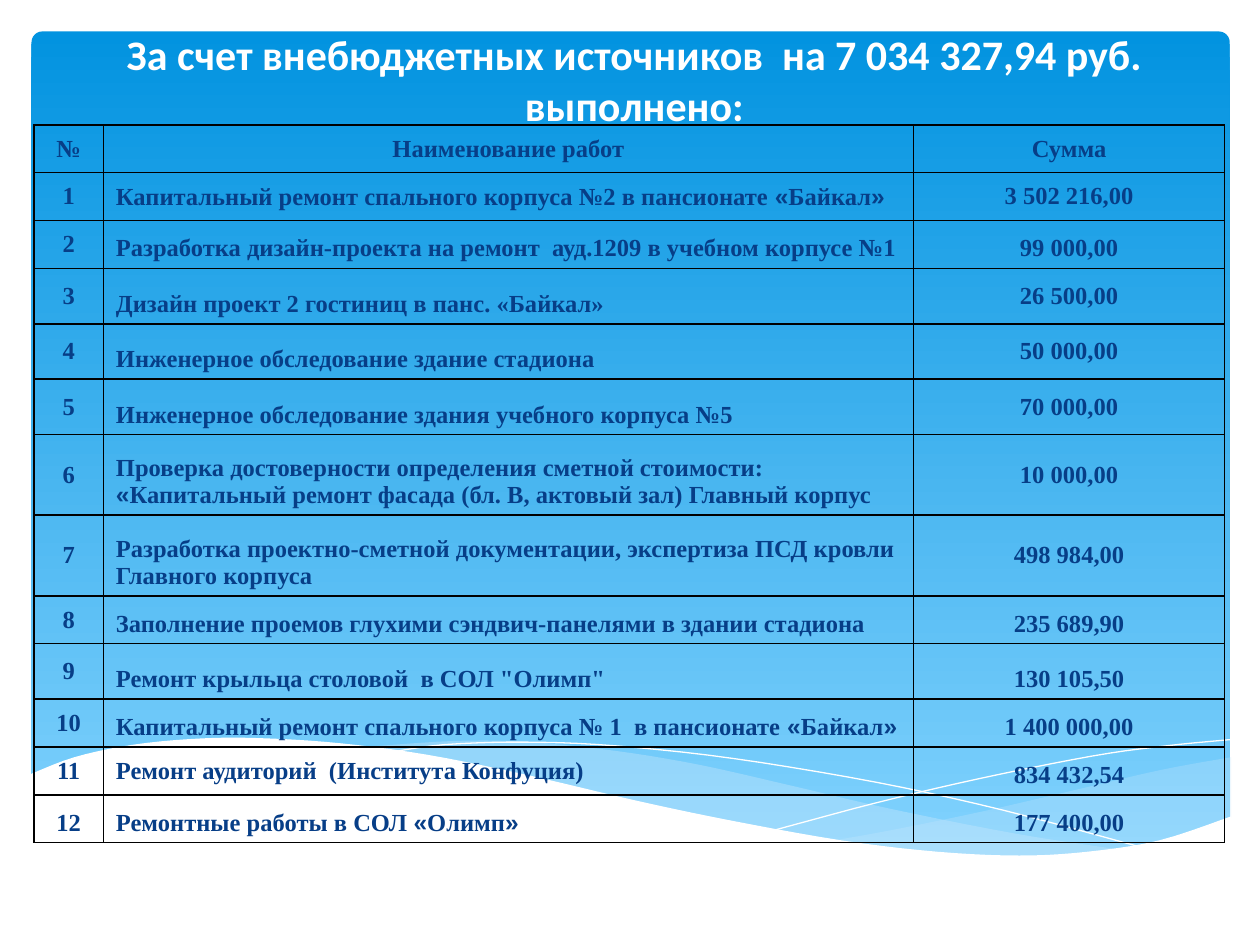
from lxml import etree
from pptx import Presentation
from pptx.dml.color import RGBColor
from pptx.enum.shapes import MSO_SHAPE
from pptx.enum.text import MSO_ANCHOR, PP_ALIGN
from pptx.oxml.ns import qn
from pptx.util import Inches, Pt

ROUNDED = MSO_SHAPE.ROUNDED_RECTANGLE
CENTER, LEFT = PP_ALIGN.CENTER, PP_ALIGN.LEFT
ANCHORS = {"m": MSO_ANCHOR.MIDDLE, "b": MSO_ANCHOR.BOTTOM}
WHITE, NAVY, BLACK, PALE = "FFFFFF", "073E87", "000000", "C6E7FC"
SKY_TOP, SKY_BOTTOM = "0293E0", "83D3FE"
NAME_FONTS = ("Times New Roman", "Arial")

TITLE = "За счет внебюджетных источников  на 7 034 327,94 руб. выполнено:"
HEADER = ("№", "Наименование работ", "Сумма")
# Works: name with "|" where the font alternates, amount, cell anchors, row height
WORKS = [
    ("Капитальный ремонт спального корпуса №2 в пансионате |«|Байкал|»", "3 502 216,00", "mmm", 0.38),
    ("Разработка дизайн-проекта на ремонт  ауд.1209 в учебном корпусе №1", "99 000,00", "mbb", 0.38),
    ("Дизайн проект 2 гостиниц в панс. «Байкал»", "26 500,00", "mbm", 0.44),
    ("Инженерное обследование здание стадиона", "50 000,00", "mbm", 0.44),
    ("Инженерное обследование здания учебного корпуса №5", "70 000,00", "mbm", 0.44),
    ("Проверка достоверности определения сметной стоимости: |«|"
     "Капитальный ремонт фасада (бл. В, актовый зал) Главный корпус", "10 000,00", "mbm", 0.64),
    ("Разработка проектно-сметной документации, экспертиза ПСД кровли Главного корпуса",
     "498 984,00", "mbm", 0.64),
    ("Заполнение проемов глухими сэндвич-панелями в здании стадиона", "235 689,90", "mbb", 0.38),
    ("Ремонт крыльца столовой  в СОЛ \"Олимп\"", "130 105,50", "mbb", 0.44),
    ("Капитальный ремонт спального корпуса № 1  в пансионате |«|Байкал|»", "1 400 000,00", "mbb", 0.38),
    ("Ремонт аудиторий  (Института Конфуция)", "834 432,54", "mmb", 0.38),
    ("Ремонтные работы в СОЛ |«|Олимп|»", "177 400,00", "bbb", 0.38),
]
COLUMN_WIDTHS = (0.55, 6.43, 2.47)
HEADER_HEIGHT = 0.38

RIGHT_WAVE = [
    [(9.77, 6.01), (9.22, 6.11), (8.62, 6.25), (7.8, 6.44), (7.07, 6.59), (6.62, 6.67)],
    [(6.62, 6.67), (7.19, 6.74), (7.7, 6.79), (8.15, 6.8), (8.64, 6.77), (9.22, 6.67), (9.77, 6.49)],
]
MIDDLE_WAVE = [
    [(8.94, 6.75), (8.08, 6.62), (7.07, 6.42), (6.3, 6.24), (5.55, 6.07), (4.89, 5.96),
     (4.2, 5.89), (3.62, 5.88), (2.87, 5.93)],
    [(2.87, 5.93), (3.63, 6.05), (4.5, 6.24), (5.3, 6.42), (6.19, 6.6), (6.96, 6.72),
     (7.62, 6.79), (8.19, 6.8), (8.94, 6.75)],
]
LONG_LINE = [[(3.1, 5.97), (3.53, 5.91), (4.17, 5.89), (4.89, 5.92), (5.82, 6.02),
              (6.96, 6.21), (7.96, 6.43), (9.08, 6.73)]]
SHORT_LINE = [[(6.14, 6.59), (6.96, 6.37), (7.77, 6.18), (8.67, 6), (9.25, 5.92), (9.76, 5.87)]]
WHITE_WAVE = [
    [(9.77, 6.48), (9.2, 6.67), (8.63, 6.76), (8.09, 6.79), (7.44, 6.76), (6.68, 6.67),
     (5.79, 6.51), (5.03, 6.35), (4.18, 6.15), (3.39, 5.99), (2.71, 5.9), (2.11, 5.86),
     (1.61, 5.86), (1.06, 5.91), (0.59, 6.01), (0.23, 6.15)],
    [(0.23, 7.31), (9.77, 7.31)],
]
WAVES = [(RIGHT_WAVE, PALE, 29), (MIDDLE_WAVE, PALE, 40), (LONG_LINE, None, 100),
         (SHORT_LINE, None, 100), (WHITE_WAVE, WHITE, 100)]


def color(value):
    return RGBColor.from_string(value)


def smooth(points, steps=5):
    """Return a Catmull-Rom curve through the points."""
    padded = [points[0], *points, points[-1]]
    curve = [points[0]]
    for a, b, c, d in zip(padded, padded[1:], padded[2:], padded[3:]):
        for step in range(1, steps + 1):
            t = step / steps
            curve.append(tuple(
                (2 * q + (r - p) * t + (2 * p - 5 * q + 4 * r - s) * t ** 2
                 + (3 * q - p - 3 * r + s) * t ** 3) / 2
                for p, q, r, s in zip(a, b, c, d)))
    return curve


def add_wave(slide, edges, fill, opacity):
    points = [(Inches(x), Inches(y)) for edge in edges for x, y in smooth(edge)]
    builder = slide.shapes.build_freeform(*points[0])
    builder.add_line_segments(points[1:], close=fill is not None)
    shape = builder.convert_to_shape()
    shape.shadow.inherit = False
    if fill is None:
        shape.fill.background()
        shape.line.color.rgb = color(WHITE)
        shape.line.width = Pt(0)
        return
    shape.line.fill.background()
    shape.fill.solid()
    shape.fill.fore_color.rgb = color(fill)
    if opacity < 100:
        fill_color = shape._element.spPr.find(qn("a:solidFill"))[0]
        etree.SubElement(fill_color, qn("a:alpha"), val=str(opacity * 1000))


def add_backdrop(slide):
    panel = slide.shapes.add_shape(ROUNDED, Inches(0.25), Inches(0.25), Inches(9.51), Inches(6.6))
    panel.adjustments[0] = 0.013
    panel.shadow.inherit = False
    panel.line.fill.background()
    panel.fill.gradient()
    panel.fill.gradient_angle = 270
    for stop, value, position in zip(panel.fill.gradient_stops, (SKY_TOP, SKY_BOTTOM), (0, 1)):
        stop.color.rgb = color(value)
        stop.position = position
    for wave in WAVES:
        add_wave(slide, *wave)


def format_run(run, font, size, value):
    run.font.name, run.font.size, run.font.bold = font, Pt(size), True
    run.font.color.rgb = color(value)


def add_title(slide):
    box = slide.shapes.add_textbox(Inches(0.27), Inches(0.28), Inches(9.53), Inches(1.02))
    frame = box.text_frame
    frame.word_wrap = True
    frame.vertical_anchor = ANCHORS["b"]
    frame.margin_bottom = Inches(0.27)
    frame.text = TITLE
    frame.paragraphs[0].alignment = CENTER
    format_run(frame.paragraphs[0].runs[0], "Calibri", 24, WHITE)


def add_borders(cell):
    properties = cell._tc.get_or_add_tcPr()
    for index, side in enumerate(("lnL", "lnR", "lnT", "lnB")):
        line = etree.Element(qn(f"a:{side}"), w=str(Pt(1)))
        fill = etree.SubElement(line, qn("a:solidFill"))
        etree.SubElement(fill, qn("a:srgbClr"), val=BLACK)
        properties.insert(index, line)


def fill_cell(cell, text, anchor, alignment):
    cell.fill.background()
    add_borders(cell)
    cell.vertical_anchor = ANCHORS[anchor]
    paragraph = cell.text_frame.paragraphs[0]
    paragraph.alignment = alignment
    for index, piece in enumerate(text.split("|")):
        run = paragraph.add_run()
        run.text = piece
        format_run(run, NAME_FONTS[index % 2], 14, NAVY)


def add_works_table(slide):
    rows = [(HEADER, "mmm", HEADER_HEIGHT)]
    rows += [((str(number), name, amount), anchors, height)
             for number, (name, amount, anchors, height) in enumerate(WORKS, 1)]
    total_height = sum(height for _, _, height in rows)
    table = slide.shapes.add_table(
        len(rows), len(COLUMN_WIDTHS), Inches(0.27), Inches(0.99),
        Inches(sum(COLUMN_WIDTHS)), Inches(total_height)).table
    table.first_row = table.horz_banding = False
    for column, width in zip(table.columns, COLUMN_WIDTHS):
        column.width = Inches(width)
    for row_index, (texts, anchors, height) in enumerate(rows):
        table.rows[row_index].height = Inches(height)
        for column_index, (text, anchor) in enumerate(zip(texts, anchors)):
            alignment = LEFT if row_index and column_index == 1 else CENTER
            fill_cell(table.cell(row_index, column_index), text, anchor, alignment)


def main():
    """Build the slide listing works paid from off-budget sources."""
    presentation = Presentation()
    presentation.slide_width, presentation.slide_height = Inches(10), Inches(7.5)
    slide = presentation.slides.add_slide(presentation.slide_layouts[6])
    add_backdrop(slide)
    add_title(slide)
    add_works_table(slide)
    presentation.save("out.pptx")


if __name__ == "__main__":
    main()
